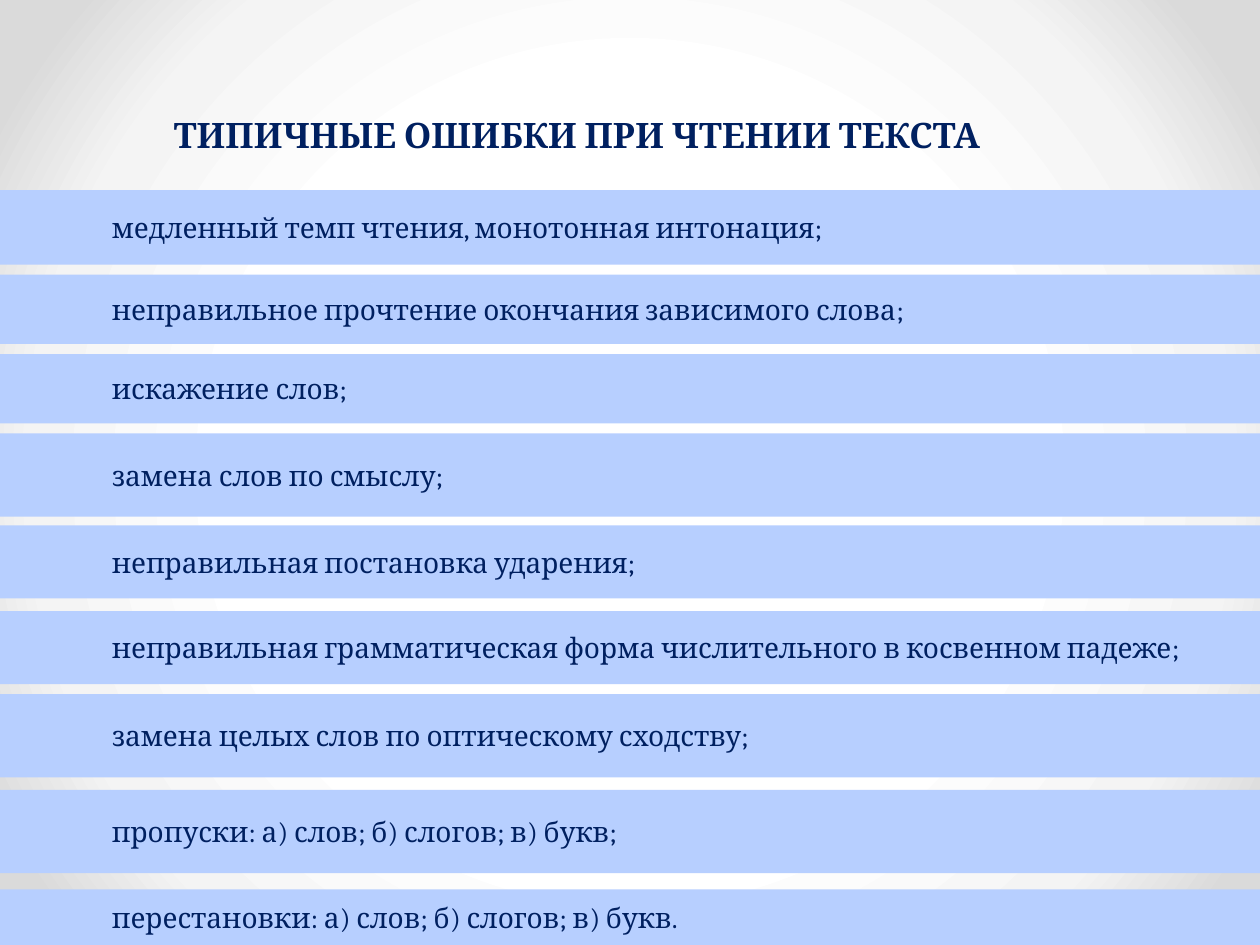
"""Build a slide listing typical mistakes in reading a text aloud."""
from pptx import Presentation
from pptx import oxml
from pptx import util as u
from pptx.dml.color import RGBColor
from pptx.enum import shapes, text
from pptx.oxml import ns


def color(value):
    return RGBColor.from_string(value)


def write(box, wording, size, bold=False, indent=0, spacing=None, inset=None):
    frame = box.text_frame
    frame.word_wrap = True
    frame.vertical_anchor = text.MSO_ANCHOR.MIDDLE
    if inset is not None:
        frame.margin_left = frame.margin_right = u.Inches(inset)
        frame.margin_top = frame.margin_bottom = u.Inches(inset)
    para = frame.paragraphs[0]
    para.alignment = text.PP_ALIGN.LEFT
    if spacing:
        para.line_spacing = u.Pt(spacing)
    if indent:
        properties = para._p.get_or_add_pPr()
        properties.set("marL", str(u.Inches(indent)))
        properties.set("indent", "0")
    span = para.add_run()
    span.text = wording
    span.font.name = "Cambria"
    span.font.size = u.Pt(size)
    span.font.bold = bold
    span.font.color.rgb = color("002060")


deck = Presentation()
deck.slide_width, deck.slide_height = u.Inches(10), u.Inches(7.5)
page = deck.slides.add_slide(deck.slide_layouts[6])

stops = "".join(
    f'<a:gs pos="{percent * 1000}"><a:srgbClr val="{shade}"/></a:gs>'
    for percent, shade in [(50, "FFFFFF"), (76, "F4F4F4"), (92, "DADADA")]
)
gradient = oxml.parse_xml(
    f'<a:gradFill {ns.nsdecls("a")} rotWithShape="1"><a:gsLst>{stops}</a:gsLst>'
    '<a:path path="circle"><a:fillToRect l="50000" t="50000" r="50000" b="50000"/>'
    "</a:path></a:gradFill>"
)
page.background.fill.solid()
background = page.element.find(".//" + ns.qn("p:bgPr"))
background.replace(background[0], gradient)

title = page.shapes.add_textbox(u.Inches(1.38), u.Inches(0.6), u.Inches(7.81), u.Inches(0.46))
write(title, "ТИПИЧНЫЕ ОШИБКИ ПРИ ЧТЕНИИ ТЕКСТА", 20, bold=True, spacing=58, inset=0)

mistakes = [
    (1.51, 0.59, "медленный темп чтения, монотонная интонация;"),
    (2.18, 0.55, "неправильное прочтение окончания зависимого слова;"),
    (2.81, 0.55, "искажение слов;"),
    (3.44, 0.66, "замена слов по смыслу;"),
    (4.17, 0.58, "неправильная постановка ударения;"),
    (4.85, 0.58, "неправильная грамматическая форма числительного в косвенном падеже;"),
    (5.51, 0.66, "замена целых слов по оптическому сходству;"),
    (6.27, 0.66, "пропуски: а) слов; б) слогов; в) букв;"),
    (7.06, 0.44, "перестановки: а) слов; б) слогов; в) букв."),
]
for top, height, wording in mistakes:
    band = page.shapes.add_shape(
        shapes.MSO_SHAPE.RECTANGLE, 0, u.Inches(top), deck.slide_width, u.Inches(height)
    )
    band.shadow.inherit = False
    band.fill.solid()
    band.fill.fore_color.rgb = color("B7CFFF")
    band.line.fill.background()
    write(band, wording, 16, indent=0.79)

deck.save("out.pptx")
